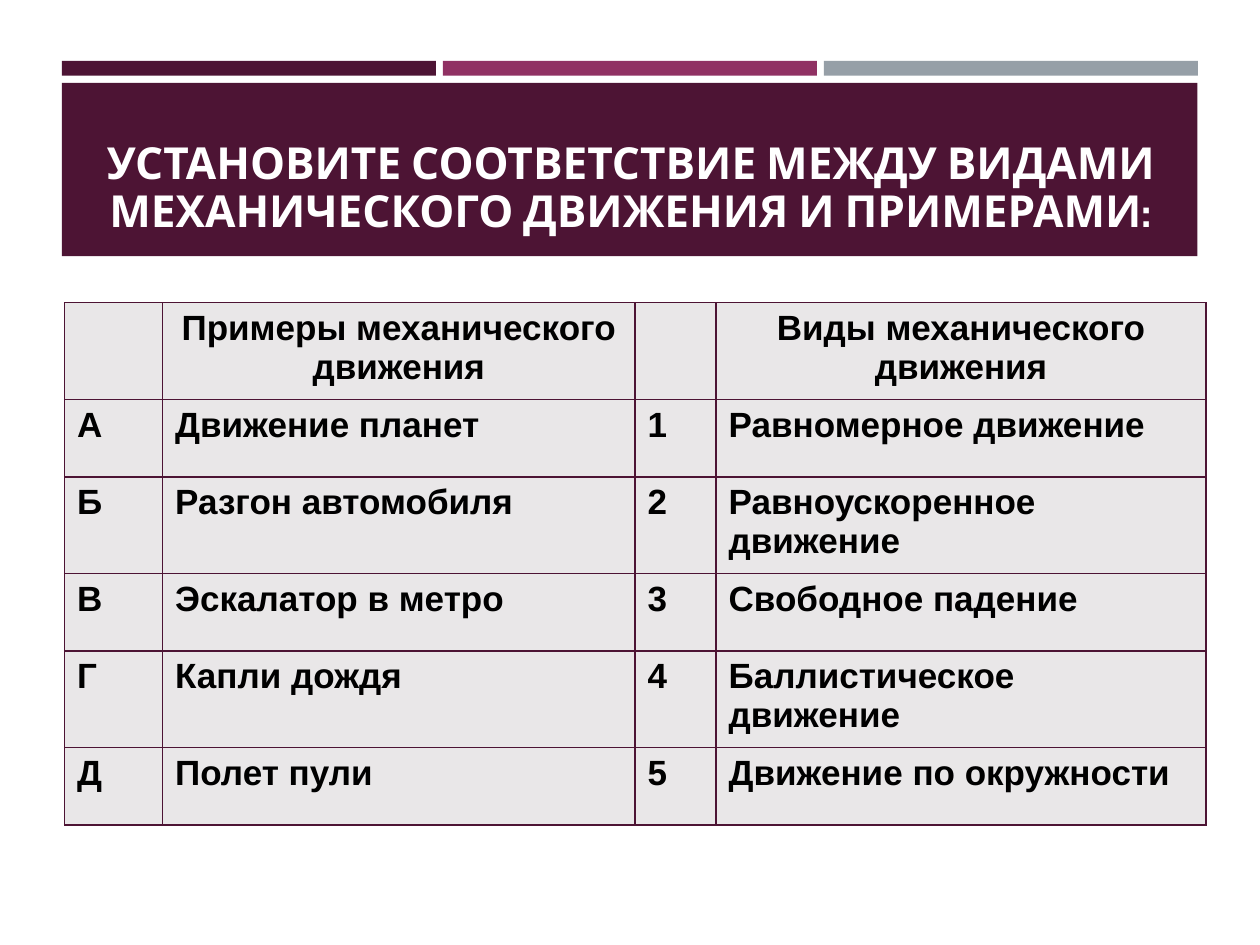
from lxml.etree import SubElement as Sub
from pptx import Presentation
from pptx.dml.color import RGBColor
from pptx.enum.shapes import MSO_SHAPE as Shape
from pptx.enum.text import MSO_ANCHOR as Anchor, PP_ALIGN as Align
from pptx.oxml.ns import qn
from pptx.util import Pt


def color(value):
    return RGBColor.from_string(value)


def write(tf, text, size=20, font="Arial", fill="000000", align=Align.LEFT, spacing=None, before=None):
    p = tf.paragraphs[0]
    p.alignment, p.line_spacing, p.space_before = align, spacing, before
    r = p.add_run()
    r.text = text
    r.font.size, r.font.name, r.font.bold = Pt(size), font, True
    r.font.color.rgb = color(fill)


"""Slide on matching kinds of mechanical motion with examples."""
DARK = "4D1434"
prs = Presentation()
prs.slide_width, prs.slide_height = Pt(720), Pt(540)
s = prs.slides.add_slide(prs.slide_layouts[6])

bars = [(35.4 + i * 217.7, 34.8, 213.8, 8.4, fill) for i, fill in enumerate([DARK, "903163", "969FA7"])]
for x, y, w, h, fill in bars + [(35.4, 47.4, 648.9, 99, DARK)]:
    sp = s.shapes.add_shape(Shape.RECTANGLE, Pt(x), Pt(y), Pt(w), Pt(h))
    sp.shadow.inherit = False
    sp.fill.solid()
    sp.fill.fore_color.rgb = color(fill)
    sp.line.fill.background()

tf = s.shapes.add_textbox(Pt(46), Pt(54), Pt(629), Pt(85)).text_frame
tf.word_wrap, tf.vertical_anchor = True, Anchor.BOTTOM
write(tf, "УСТАНОВИТЕ СООТВЕТСТВИЕ МЕЖДУ ВИДАМИ МЕХАНИЧЕСКОГО ДВИЖЕНИЯ И ПРИМЕРАМИ:",
      size=25.2, font="Cabin", fill="FFFFFF", align=Align.CENTER, spacing=0.9)

rows = [
    ("", "Примеры механического движения", "", "Виды механического движения"),
    ("А", "Движение планет", "1", "Равномерное движение"),
    ("Б", "Разгон автомобиля", "2", "Равноускоренное движение"),
    ("В", "Эскалатор в метро", "3", "Свободное падение"),
    ("Г", "Капли дождя", "4", "Баллистическое движение"),
    ("Д", "Полет пули", "5", "Движение по окружности"),
]
widths = [56, 270, 46.3, 280]
table = s.shapes.add_table(len(rows), len(widths), Pt(36.9), Pt(173), Pt(sum(widths)), Pt(298)).table
table.first_row = table.horz_banding = False
for column, width in zip(table.columns, widths):
    column.width = Pt(width)
for i, row in enumerate(rows):
    table.rows[i].height = Pt(44.2 if i % 2 else 45)
    for j, text in enumerate(row):
        cell = table.cell(i, j)
        tcPr = cell._tc.get_or_add_tcPr()
        for side in ("a:lnL", "a:lnR", "a:lnT", "a:lnB"):
            ln = Sub(tcPr, qn(side), w=str(Pt(1)))
            Sub(Sub(ln, qn("a:solidFill")), qn("a:srgbClr"), val=DARK)
        cell.fill.solid()
        cell.fill.fore_color.rgb = color("E9E7E8")
        if text:
            write(cell.text_frame, text, align=Align.LEFT if i else Align.CENTER)

prs.save("out.pptx")
